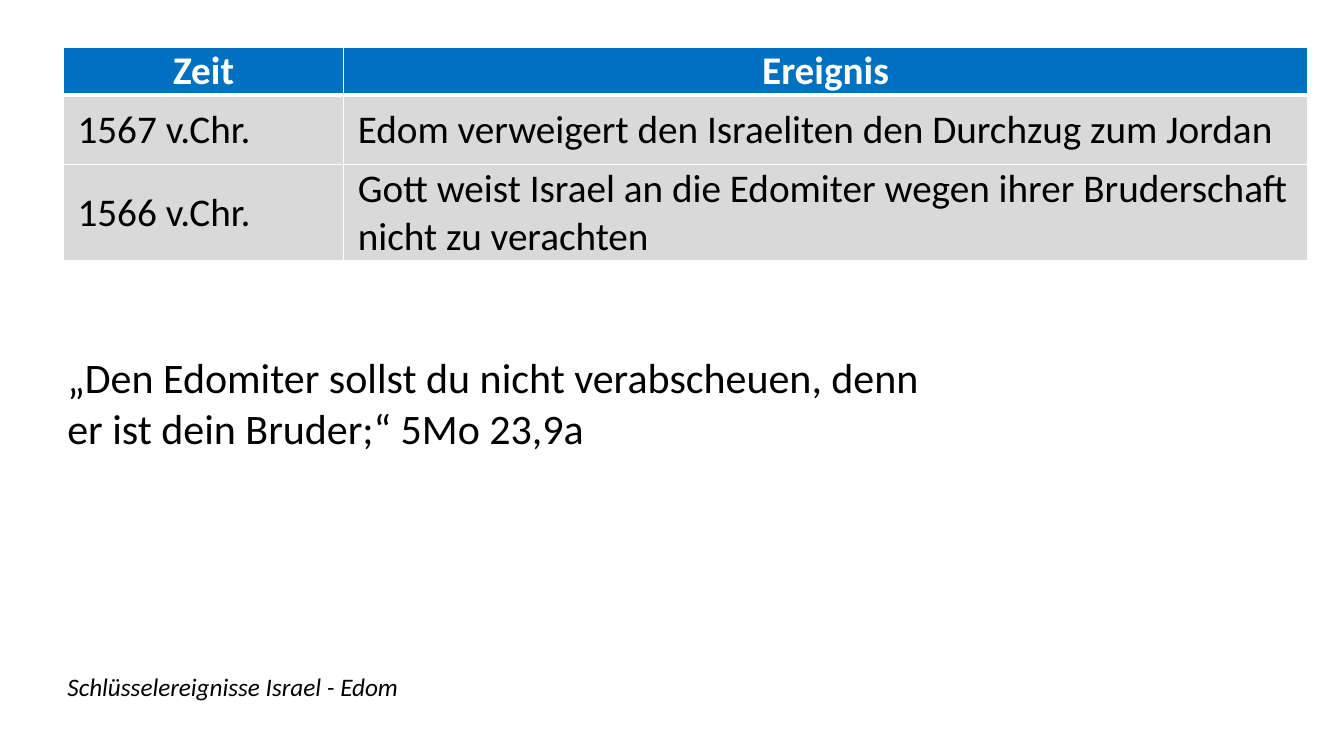
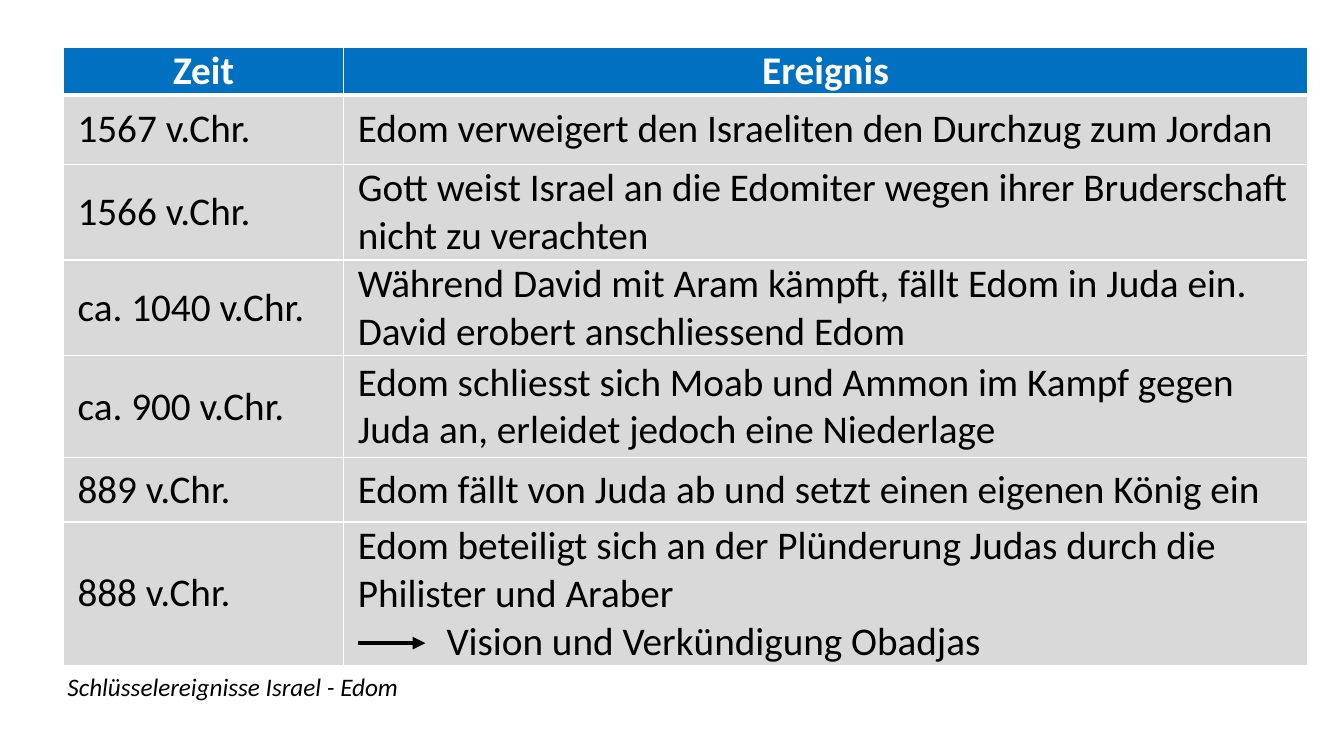
from typing import NamedTuple

from lxml import etree
from pptx import Presentation, util as u
from pptx.dml.color import RGBColor
from pptx.enum import shapes, text
from pptx.oxml import ns

# The page is a grid of square cells, ten to the inch.
CELL = u.Inches(0.1)
PAGE_COLUMNS, PAGE_ROWS = 133.33, 75
FONT = "Calibri"
BLACK, WHITE, BLUE, GREY = "000000", "FFFFFF", "0070C0", "D9D9D9"

TABLE_LEFT, TABLE_TOP = 6.3, 4.7
TABLE_COLUMNS = (27.8, 95.6)
HEADER_HEIGHT = 4.7
HEADINGS = ("Zeit", "Ereignis")
CELL_MARGIN = 1.4
CONCLUSION_INDENT = 8.8
TEXT_LEFT = 5.7
THIN, THICK = 1, 3


class Event(NamedTuple):
    time: str
    story: str
    height: float
    conclusion: str = ""


class TextStyle(NamedTuple):
    size: float
    colour: str = BLACK
    bold: bool = False
    italic: bool = False


class Borders(NamedTuple):
    """Line widths in points, in the order the file format requires."""
    lnL: float = THIN
    lnR: float = THIN
    lnT: float = THIN
    lnB: float = THIN


HEADER_STYLE = TextStyle(28, WHITE, bold=True)
BODY_STYLE = TextStyle(28)
QUOTE_STYLE = TextStyle(30)
FOOTER_STYLE = TextStyle(18, italic=True)

EVENTS = (
    Event("1567 v.Chr.", "Edom verweigert den Israeliten den Durchzug zum Jordan", 6.9),
    Event("1566 v.Chr.", "Gott weist Israel an die Edomiter wegen ihrer Bruderschaft "
          "nicht zu verachten", 9.5),
    Event("ca. 1040 v.Chr.", "Während David mit Aram kämpft, fällt Edom in Juda ein. "
          "David erobert anschliessend Edom", 9.5),
    Event("ca. 900 v.Chr.", "Edom schliesst sich Moab und Ammon im Kampf gegen Juda an, "
          "erleidet jedoch eine Niederlage", 10.1),
    Event("889 v.Chr.", "Edom fällt von Juda ab und setzt einen eigenen König ein", 6.4),
    Event("888 v.Chr.", "Edom beteiligt sich an der Plünderung Judas durch die "
          "Philister und Araber", 14.2, "Vision und Verkündigung Obadjas"),
)


def cells(count: float) -> u.Emu:
    return u.Emu(round(count * CELL))


def colour(code: str) -> RGBColor:
    return RGBColor.from_string(code)


def add_span(para, words: str, style: TextStyle) -> None:
    span = para.add_run()
    span.text = words
    span.font.name = FONT
    span.font.size = u.Pt(style.size)
    span.font.bold = style.bold
    span.font.italic = style.italic
    span.font.color.rgb = colour(style.colour)


def add_text(page, top: float, width: float, height: float, words: str,
             style: TextStyle, wrap: bool = True) -> None:
    box = page.shapes.add_textbox(*map(cells, (TEXT_LEFT, top, width, height)))
    box.text_frame.word_wrap = wrap
    box.text_frame.auto_size = text.MSO_AUTO_SIZE.SHAPE_TO_FIT_TEXT
    add_span(box.text_frame.paragraphs[0], words, style)


def format_cell(cell, fill: str, borders: Borders) -> None:
    cell.vertical_anchor = text.MSO_ANCHOR.MIDDLE
    cell.margin_left = cell.margin_right = cells(CELL_MARGIN)
    cell.margin_top = cell.margin_bottom = 0
    properties = cell._tc.get_or_add_tcPr()
    for side, width in borders._asdict().items():
        line = etree.SubElement(properties, ns.qn(f"a:{side}"), w=str(u.Pt(width)))
        solid = etree.SubElement(line, ns.qn("a:solidFill"))
        etree.SubElement(solid, ns.qn("a:srgbClr"), val=WHITE)
    cell.fill.solid()
    cell.fill.fore_color.rgb = colour(fill)


def add_timeline(page, events: tuple[Event, ...]) -> None:
    heights = [HEADER_HEIGHT, *(event.height for event in events)]
    frame = page.shapes.add_table(
        len(heights), len(TABLE_COLUMNS), cells(TABLE_LEFT), cells(TABLE_TOP),
        cells(sum(TABLE_COLUMNS)), cells(sum(heights)))
    table = frame.table
    table.horz_banding = False
    for column, width in zip(table.columns, TABLE_COLUMNS):
        column.width = cells(width)
    for row, height in zip(table.rows, heights):
        row.height = cells(height)

    for cell, heading in zip(table.rows[0].cells, HEADINGS):
        format_cell(cell, BLUE, Borders(lnB=THICK))
        para = cell.text_frame.paragraphs[0]
        para.alignment = text.PP_ALIGN.CENTER
        add_span(para, heading, HEADER_STYLE)

    for number, event in enumerate(events, start=1):
        borders = Borders(lnT=THICK if number == 1 else THIN)
        for cell, words in zip(table.rows[number].cells, (event.time, event.story)):
            format_cell(cell, GREY, borders)
            add_span(cell.text_frame.paragraphs[0], words, BODY_STYLE)
        if event.conclusion:
            para = table.cell(number, 1).text_frame.add_paragraph()
            para._p.get_or_add_pPr().set("marL", str(cells(CONCLUSION_INDENT)))
            add_span(para, event.conclusion, BODY_STYLE)


def add_arrow(page, left: float, right: float, top: float) -> None:
    arrow = page.shapes.add_connector(
        shapes.MSO_CONNECTOR.STRAIGHT, *map(cells, (left, top, right, top)))
    arrow.line.color.rgb = colour(BLACK)
    arrow.line.width = u.Pt(3)
    etree.SubElement(arrow.line._get_or_add_ln(), ns.qn("a:tailEnd"), type="triangle")
    etree.SubElement(arrow._element.spPr, ns.qn("a:effectLst"))


def add_page(deck, events: tuple[Event, ...]):
    """Add a page with the timeline and the shared footer."""
    page = deck.slides.add_slide(deck.slide_layouts[6])
    add_timeline(page, events)
    add_text(page, 66.1, 36.5, 4, "Schlüsselereignisse Israel - Edom",
             FOOTER_STYLE, wrap=False)
    return page


def main() -> None:
    deck = Presentation()
    deck.slide_width, deck.slide_height = cells(PAGE_COLUMNS), cells(PAGE_ROWS)

    brother_page = add_page(deck, EVENTS[:2])
    add_text(brother_page, 34.4, 88.3, 11.1,
             "„Den Edomiter sollst du nicht verabscheuen, denn er ist dein Bruder;“ "
             "5Mo 23,9a", QUOTE_STYLE)

    overview_page = add_page(deck, EVENTS)
    add_arrow(overview_page, 35.5, 42.2, 63.8)

    deck.save("out.pptx")


if __name__ == "__main__":
    main()
